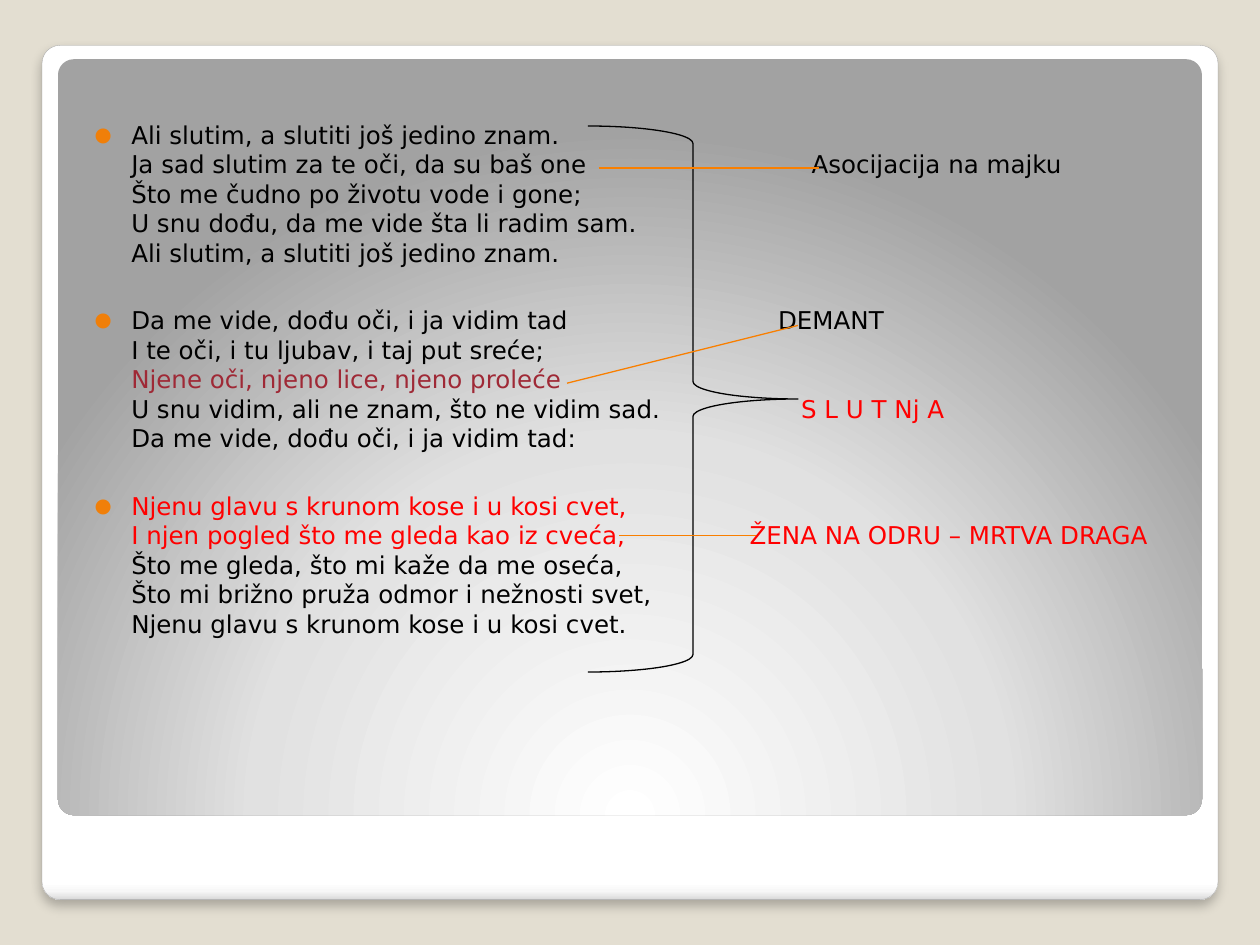
from lxml import etree
from pptx import Presentation
from pptx import util as u
from pptx.dml.color import RGBColor
from pptx.enum import shapes, text
from pptx.oxml import parse_xml
from pptx.oxml.ns import qn

NS = 'xmlns:a="http://schemas.openxmlformats.org/drawingml/2006/main"'
FONT, SIZE, LEAD, GAP = "DejaVu Sans", 14, 16.85, 21.8
CELL = 6
TOP, LEFT, HANG = 4.44, 2.4, 3.5
BLACK, RED, WINE, ORANGE = "000000", "FF0000", "9F2936", "F97F00"

STANZAS = [
    [("Ali slutim, a slutiti još jedino znam.", BLACK),
     ("Ja sad slutim za te oči, da su baš one", BLACK),
     ("Što me čudno po životu vode i gone;", BLACK),
     ("U snu dođu, da me vide šta li radim sam.", BLACK),
     ("Ali slutim, a slutiti još jedino znam.", BLACK)],
    [("Da me vide, dođu oči, i ja vidim tad", BLACK),
     ("I te oči, i tu ljubav, i taj put sreće;", BLACK),
     ("Njene oči, njeno lice, njeno proleće", WINE),
     ("U snu vidim, ali ne znam, što ne vidim sad.", BLACK),
     ("Da me vide, dođu oči, i ja vidim tad:", BLACK)],
    [("Njenu glavu s krunom kose i u kosi cvet,", RED),
     ("I njen pogled što me gleda kao iz cveća,", RED),
     ("Što me gleda, što mi kaže da me oseća,", BLACK),
     ("Što mi brižno pruža odmor i nežnosti svet,", BLACK),
     ("Njenu glavu s krunom kose i u kosi cvet.", BLACK)],
]
NOTES = [
    ("Asocijacija na majku", BLACK, 0, 1, 70.7),
    ("DEMANT", BLACK, 1, 0, 67.5),
    ("S L U T Nj A", RED, 1, 3, 69.7),
    ("ŽENA NA ODRU – MRTVA DRAGA", RED, 2, 1, 64.8),
]
LINKS = [(50.4, 9.04, 71.4, 9.04), (47.4, 29.54, 69.4, 24.04),
         (52.4, 44.04, 65.4, 44.04)]


def tint(code):
    return RGBColor.from_string(code)


def grid(*cells):
    return [u.Pt(cell * CELL) for cell in cells]


def fade(shape, stops, way):
    marks = "".join(f'<a:gs pos="{at * 1000}"><a:srgbClr val="{code}"/></a:gs>'
                    for at, code in stops)
    shape.fill.background()
    props = shape.element.spPr
    props.replace(props.find(qn("a:noFill")), parse_xml(
        f'<a:gradFill {NS} rotWithShape="1"><a:gsLst>{marks}</a:gsLst>{way}</a:gradFill>'))


def plate(slide, box, stops, way):
    shape = slide.shapes.add_shape(shapes.MSO_SHAPE.ROUNDED_RECTANGLE, *grid(*box))
    shape.adjustments[0] = 0.021
    shape.shadow.inherit = False
    shape.line.fill.background()
    fade(shape, stops, way)
    return shape


def frame(slide, box):
    left, top, width, height = box
    card = plate(slide, box,
                 [(0, "FFFFFF"), (98, "FFFFFF"), (99, "F7F7F7"), (100, "DADADA")],
                 '<a:lin ang="5400000" scaled="0"/>')
    card.line.color.rgb = tint("A4A4A4")
    card.line.width = u.Pt(0.16)
    glow = card.element.spPr.find(qn("a:effectLst"))
    glow.append(parse_xml(
        f'<a:outerShdw {NS} blurRad="{u.Pt(6)}" dist="{u.Pt(4)}" dir="5400000" '
        'algn="t" rotWithShape="0"><a:srgbClr val="000000"><a:alpha val="25000"/>'
        '</a:srgbClr></a:outerShdw>'))
    plate(slide, (left + 1.52, top + 1.32, width - 3.04, height - 9.36),
          [(0, "FFFFFF"), (55, "E1E1E1"), (100, "A2A2A2")],
          '<a:path path="circle"><a:fillToRect l="50000" t="175000" '
          'r="50000" b="-75000"/></a:path>')


def add(para, words, code):
    run = para.add_run()
    run.text = words
    run.font.name, run.font.size = FONT, u.Pt(SIZE)
    run.font.color.rgb = tint(code)


def space(para, gap=0):
    para.line_spacing = u.Pt(LEAD)
    para.space_before = u.Pt(gap)
    para.space_after = u.Pt(0)
    para.alignment = text.PP_ALIGN.LEFT


def dot(para):
    props = para._p.get_or_add_pPr()
    hang = u.Pt(HANG * CELL)
    props.set("marL", str(hang))
    props.set("indent", str(-hang))
    for part in ('<a:buClr {}><a:srgbClr val="F07F09"/></a:buClr>',
                 '<a:buSzPct {} val="80000"/>',
                 '<a:buFont {} typeface="DejaVu Sans"/>',
                 '<a:buChar {} char="●"/>'):
        props.append(etree.fromstring(part.format(NS)))


def poem(slide, box):
    body = slide.placeholders[1]
    body.left, body.top, body.width, body.height = grid(*box)
    slide.shapes._spTree.append(body.element)
    words = body.text_frame
    words.word_wrap = True
    words.auto_size = text.MSO_AUTO_SIZE.NONE
    words.vertical_anchor = text.MSO_ANCHOR.TOP
    words.margin_left, words.margin_top, words.margin_right, words.margin_bottom = grid(
        LEFT, TOP, 1.2, 0.6)
    for at, lines in enumerate(STANZAS):
        para = words.add_paragraph() if at else words.paragraphs[0]
        dot(para)
        space(para, GAP if at else 0)
        for row, (line, code) in enumerate(lines):
            if row:
                para.add_line_break()
            add(para, line, code)


def notes(slide, box):
    left, top = box[:2]
    for words, code, part, row, col in NOTES:
        down = (part * (5 * LEAD + GAP) + row * LEAD) / CELL
        label = slide.shapes.add_textbox(
            *grid(left + col, top + TOP + down, 40, LEAD / CELL)).text_frame
        label.word_wrap = False
        label.margin_left = label.margin_top = label.margin_right = label.margin_bottom = 0
        space(label.paragraphs[0])
        add(label.paragraphs[0], words, code)


def marks(slide, box):
    left, top = box[:2]
    brace = slide.shapes.add_shape(shapes.MSO_SHAPE.RIGHT_BRACE,
                                   *grid(left + 49.4, top + 5.04, 20, 52))
    brace.shadow.inherit = False
    brace.fill.background()
    brace.line.color.rgb = tint(BLACK)
    brace.line.width = u.Pt(0.75)
    for ax, ay, bx, by in LINKS:
        link = slide.shapes.add_connector(
            shapes.MSO_CONNECTOR.STRAIGHT,
            *grid(left + ax, top + ay, left + bx, top + by))
        link.line.color.rgb = tint(ORANGE)
        link.line.width = u.Pt(0.75)
        etree.SubElement(link.element.spPr, qn("a:effectLst"))


def main():
    deck = Presentation()
    deck.slide_width, deck.slide_height = grid(120, 90)
    slide = deck.slides.add_slide(deck.slide_layouts[1])
    title = slide.shapes.title.element
    title.getparent().remove(title)
    slide.background.fill.solid()
    slide.background.fill.fore_color.rgb = tint("E3DED1")
    frame(slide, (4, 4.32, 112, 81.36))
    box = (6.6, 6.96, 107.4, 74.04)
    poem(slide, box)
    notes(slide, box)
    marks(slide, box)
    deck.save("out.pptx")


if __name__ == "__main__":
    main()
